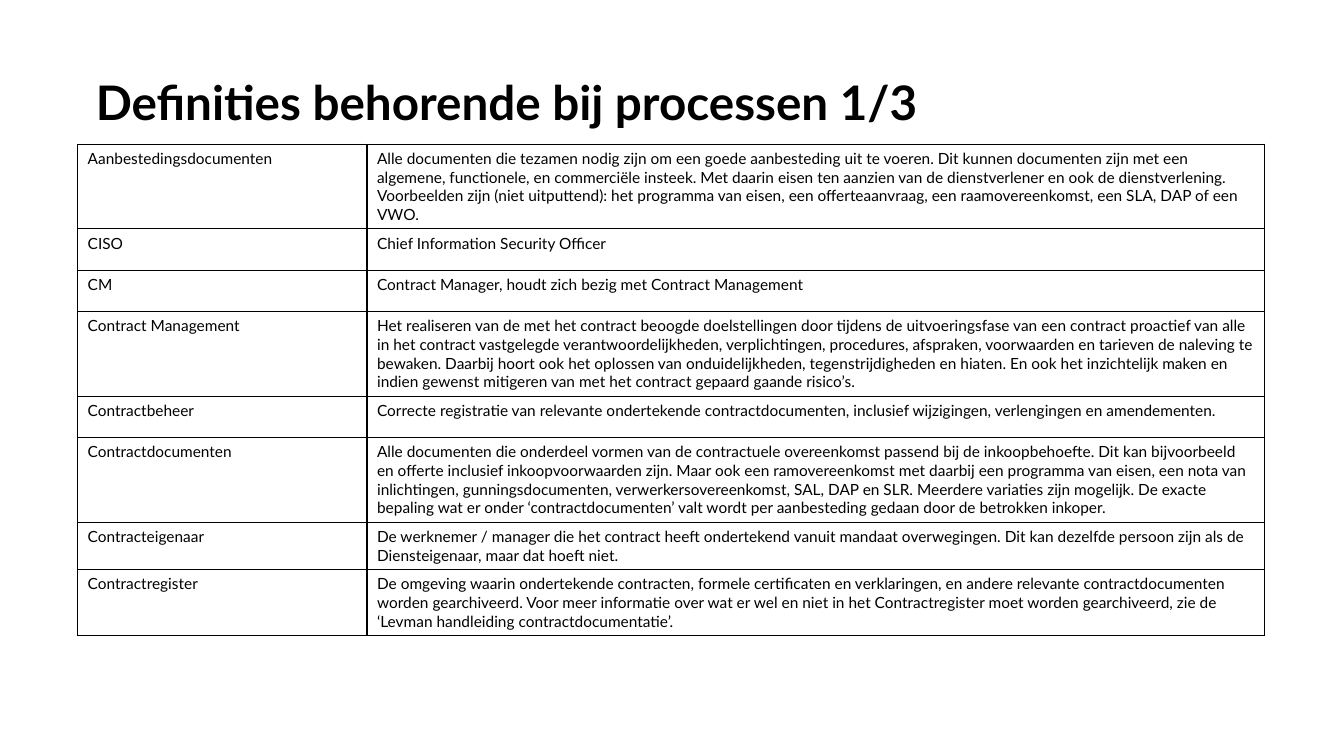
"""Build a slide with a two-column table of contract definitions."""
from lxml.etree import SubElement
from pptx import Presentation
from pptx.dml.color import RGBColor
from pptx.enum.text import MSO_ANCHOR, MSO_AUTO_SIZE, PP_ALIGN
from pptx.oxml.ns import qn
from pptx.util import Inches, Pt

TITLE = "Definities behorende bij processen 1/3"
DEFINITIONS = [
    ("Aanbestedingsdocumenten",
     "Alle documenten die tezamen nodig zijn om een goede aanbesteding uit te voeren. "
     "Dit kunnen documenten zijn met een algemene, functionele, en commerciële insteek. "
     "Met daarin eisen ten aanzien van de dienstverlener en ook de dienstverlening. "
     "Voorbeelden zijn (niet uitputtend): het programma van eisen, een offerteaanvraag, "
     "een raamovereenkomst, een SLA, DAP of een VWO."),
    ("CISO", "Chief Information Security Officer"),
    ("CM", "Contract Manager, houdt zich bezig met Contract Management"),
    ("Contract Management",
     "Het realiseren van de met het contract beoogde doelstellingen door tijdens de "
     "uitvoeringsfase van een contract proactief van alle in het contract vastgelegde "
     "verantwoordelijkheden, verplichtingen, procedures, afspraken, voorwaarden en tarieven "
     "de naleving te bewaken. Daarbij hoort ook het oplossen van onduidelijkheden, "
     "tegenstrijdigheden en hiaten. En ook het inzichtelijk maken en indien gewenst "
     "mitigeren van met het contract gepaard gaande risico’s."),
    ("Contractbeheer",
     "Correcte registratie van relevante ondertekende contractdocumenten, inclusief "
     "wijzigingen, verlengingen en amendementen."),
    ("Contractdocumenten",
     "Alle documenten die onderdeel vormen van de contractuele overeenkomst passend bij de "
     "inkoopbehoefte. Dit kan bijvoorbeeld en offerte inclusief inkoopvoorwaarden zijn. "
     "Maar ook een ramovereenkomst met daarbij een programma van eisen, een nota van "
     "inlichtingen, gunningsdocumenten, verwerkersovereenkomst, SAL, DAP en SLR. Meerdere "
     "variaties zijn mogelijk. De exacte bepaling wat er onder ‘contractdocumenten’ valt "
     "wordt per aanbesteding gedaan door de betrokken inkoper."),
    ("Contracteigenaar",
     "De werknemer / manager die het contract heeft ondertekend vanuit mandaat "
     "overwegingen. Dit kan dezelfde persoon zijn als de Diensteigenaar, maar dat hoeft niet."),
    ("Contractregister",
     "De omgeving waarin ondertekende contracten, formele certificaten en verklaringen, en "
     "andere relevante contractdocumenten worden gearchiveerd. Voor meer informatie over wat "
     "er wel en niet in het Contractregister moet worden gearchiveerd, zie de ‘Levman "
     "handleiding contractdocumentatie’."),
]

FONT = "Lato"
BLACK = RGBColor(0, 0, 0)
COLUMN_WIDTHS = (2.87, 8.9)
ROW_HEIGHT = 0.41
TABLE_LEFT, TABLE_TOP = 0.77, 1.43
TITLE_BOX = (0.95, 0.79, 11.6, 0.37)


def write(paragraph, text, size, bold=False):
    """Add one black run to a left-aligned paragraph."""
    paragraph.alignment = PP_ALIGN.LEFT
    run = paragraph.add_run()
    run.text = text
    run.font.name = FONT
    run.font.size = Pt(size)
    run.font.bold = bold
    run.font.color.rgb = BLACK


def add_borders(cell):
    """Draw a thin black line on each side of a cell."""
    properties = cell._tc.get_or_add_tcPr()
    for side in ("a:lnL", "a:lnR", "a:lnT", "a:lnB"):
        line = SubElement(properties, qn(side), w=str(Pt(1)))
        fill = SubElement(line, qn("a:solidFill"))
        SubElement(fill, qn("a:srgbClr"), val=str(BLACK))


def add_title(slide):
    """Place and format the title placeholder."""
    title = slide.shapes.title
    title.left, title.top, title.width, title.height = map(Inches, TITLE_BOX)
    frame = title.text_frame
    frame.margin_left = frame.margin_right = frame.margin_top = frame.margin_bottom = 0
    frame.word_wrap = True
    frame.auto_size = MSO_AUTO_SIZE.NONE
    frame.vertical_anchor = MSO_ANCHOR.TOP
    paragraph = frame.paragraphs[0]
    paragraph.line_spacing = 0.9
    write(paragraph, TITLE, 34, bold=True)


def add_definitions(slide):
    """Add the table of terms and their definitions."""
    row_count = len(DEFINITIONS)
    table = slide.shapes.add_table(
        row_count, len(COLUMN_WIDTHS), Inches(TABLE_LEFT), Inches(TABLE_TOP),
        Inches(sum(COLUMN_WIDTHS)), Inches(ROW_HEIGHT * row_count)).table
    table.first_row = table.horz_banding = False
    for column, width in zip(table.columns, COLUMN_WIDTHS):
        column.width = Inches(width)
    for row, texts in zip(table.rows, DEFINITIONS):
        row.height = Inches(ROW_HEIGHT)
        for cell, text in zip(row.cells, texts):
            add_borders(cell)
            cell.fill.background()
            write(cell.text_frame.paragraphs[0], text, 11)


def main():
    """Create and save the presentation."""
    presentation = Presentation()
    presentation.slide_width = Inches(13.33)
    presentation.slide_height = Inches(7.5)
    slide = presentation.slides.add_slide(presentation.slide_layouts[5])
    add_title(slide)
    add_definitions(slide)
    presentation.save("out.pptx")


if __name__ == "__main__":
    main()
